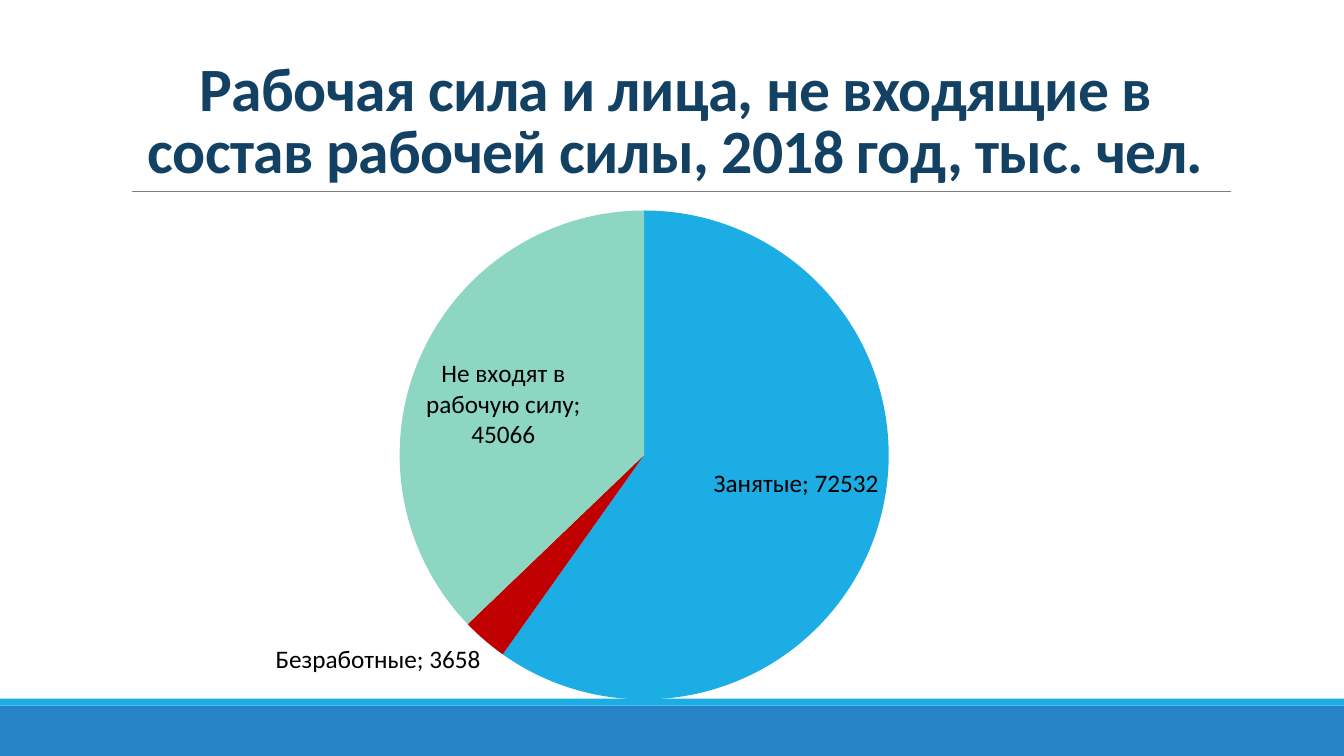
from dataclasses import dataclass

import pptx
import pptx.chart.data
import pptx.dml.color
import pptx.enum.chart
import pptx.enum.shapes
import pptx.enum.text
import pptx.oxml.ns
import pptx.oxml.xmlchemy
import pptx.util

SLIDE_W, SLIDE_H = 13.33, 7.5


@dataclass(frozen=True)
class Theme:
    font: str = "Calibri"
    title: str = "134163"
    text: str = "000000"
    rule: str = "808080"
    blue: str = "2683C6"
    cyan: str = "1CADE4"
    red: str = "C00000"
    mint: str = "8DD6C1"
    title_pt: int = 44
    label_pt: int = 18
    rule_pt: float = 0.5


@dataclass(frozen=True)
class Box:
    """Place on the slide, in percent of its width and height."""
    left: float
    top: float
    width: float
    height: float

    def emu(self) -> tuple:
        return (across(self.left), down(self.top),
                across(self.width), down(self.height))


@dataclass(frozen=True)
class Band:
    box: Box
    color: str


@dataclass(frozen=True)
class Slice:
    name: str
    value: int
    color: str


THEME = Theme()
TITLE = "Рабочая сила и лица, не входящие в состав рабочей силы, 2018 год, тыс. чел."
TITLE_BOX = Box(9, 4.13, 82.52, 21.2)
CHART_BOX = Box(9, 26.93, 84.92, 65.6)
RULE_LEFT, RULE_RIGHT, RULE_Y = 9.83, 91.6, 25.33
PLOT = {"x": 0.244, "y": 0.014, "w": 0.429, "h": 0.986}
BANDS = (
    Band(Box(0, 93.33, 100, 6.67), THEME.blue),
    Band(Box(0, 92.4, 100, 0.93), THEME.cyan),
)
SLICES = (
    Slice("Занятые", 72532, THEME.cyan),
    Slice("Безработные", 3658, THEME.red),
    Slice("Не входят в рабочую силу", 45066, THEME.mint),
)


def across(share: float) -> int:
    return pptx.util.Inches(SLIDE_W * share / 100)


def down(share: float) -> int:
    return pptx.util.Inches(SLIDE_H * share / 100)


def rgb(color: str) -> pptx.dml.color.RGBColor:
    return pptx.dml.color.RGBColor.from_string(color)


def style_font(font, size: float, color: str) -> None:
    font.name = THEME.font
    font.size = pptx.util.Pt(size)
    font.color.rgb = rgb(color)


def add_band(s, band: Band) -> None:
    sp = s.shapes.add_shape(pptx.enum.shapes.MSO_SHAPE.RECTANGLE, *band.box.emu())
    sp.shadow.inherit = False
    sp.fill.solid()
    sp.fill.fore_color.rgb = rgb(band.color)
    sp.line.fill.background()


def add_rule(s) -> None:
    line = s.shapes.add_connector(
        pptx.enum.shapes.MSO_CONNECTOR.STRAIGHT,
        across(RULE_LEFT), down(RULE_Y), across(RULE_RIGHT), down(RULE_Y))
    line.line.color.rgb = rgb(THEME.rule)
    line.line.width = pptx.util.Pt(THEME.rule_pt)
    line._element.spPr.append(pptx.oxml.xmlchemy.OxmlElement("a:effectLst"))


def format_title(s) -> None:
    sp = s.shapes.title
    sp.left, sp.top, sp.width, sp.height = TITLE_BOX.emu()
    tf = sp.text_frame
    tf.text = TITLE
    tf.word_wrap = True
    tf.auto_size = pptx.enum.text.MSO_AUTO_SIZE.NONE
    tf.vertical_anchor = pptx.enum.text.MSO_ANCHOR.BOTTOM
    p = tf.paragraphs[0]
    p.alignment = pptx.enum.text.PP_ALIGN.CENTER
    p.line_spacing = 0.85
    r = p.runs[0]
    style_font(r.font, THEME.title_pt, THEME.title)
    r.font.bold = True
    r.font._element.set("spc", "-50")


def set_plot_layout(chart) -> None:
    plot_area = chart._chartSpace.chart.plotArea
    for old in plot_area.findall(pptx.oxml.ns.qn("c:layout")):
        plot_area.remove(old)
    layout = pptx.oxml.xmlchemy.OxmlElement("c:layout")
    manual = pptx.oxml.xmlchemy.OxmlElement("c:manualLayout")
    settings = {"layoutTarget": "inner", "xMode": "edge", "yMode": "edge", **PLOT}
    for tag, value in settings.items():
        item = pptx.oxml.xmlchemy.OxmlElement(f"c:{tag}")
        item.set("val", str(value))
        manual.append(item)
    layout.append(manual)
    plot_area.insert(0, layout)


def add_pie(s) -> None:
    data = pptx.chart.data.CategoryChartData()
    data.categories = [part.name for part in SLICES]
    data.add_series("Series 1", [part.value for part in SLICES])
    chart = s.shapes.add_chart(
        pptx.enum.chart.XL_CHART_TYPE.PIE, *CHART_BOX.emu(), data).chart
    chart.has_title = False
    chart.has_legend = False
    style_font(chart.font, THEME.label_pt, THEME.text)
    set_plot_layout(chart)

    plot = chart.plots[0]
    plot.vary_by_categories = True
    for i, part in enumerate(SLICES):
        fill = plot.series[0].points[i].format.fill
        fill.solid()
        fill.fore_color.rgb = rgb(part.color)

    labels = plot.series[0].data_labels
    labels.show_category_name = True
    labels.show_value = True
    labels.show_percentage = False
    labels.position = pptx.enum.chart.XL_LABEL_POSITION.BEST_FIT
    style_font(labels.font, THEME.label_pt, THEME.text)


def main() -> None:
    prs = pptx.Presentation()
    prs.slide_width, prs.slide_height = across(100), down(100)
    s = prs.slides.add_slide(prs.slide_layouts[5])

    # Bottom bands and the rule under the title
    for band in BANDS:
        add_band(s, band)
    add_rule(s)

    # Title and pie chart
    format_title(s)
    add_pie(s)
    prs.save("out.pptx")


if __name__ == "__main__":
    main()
